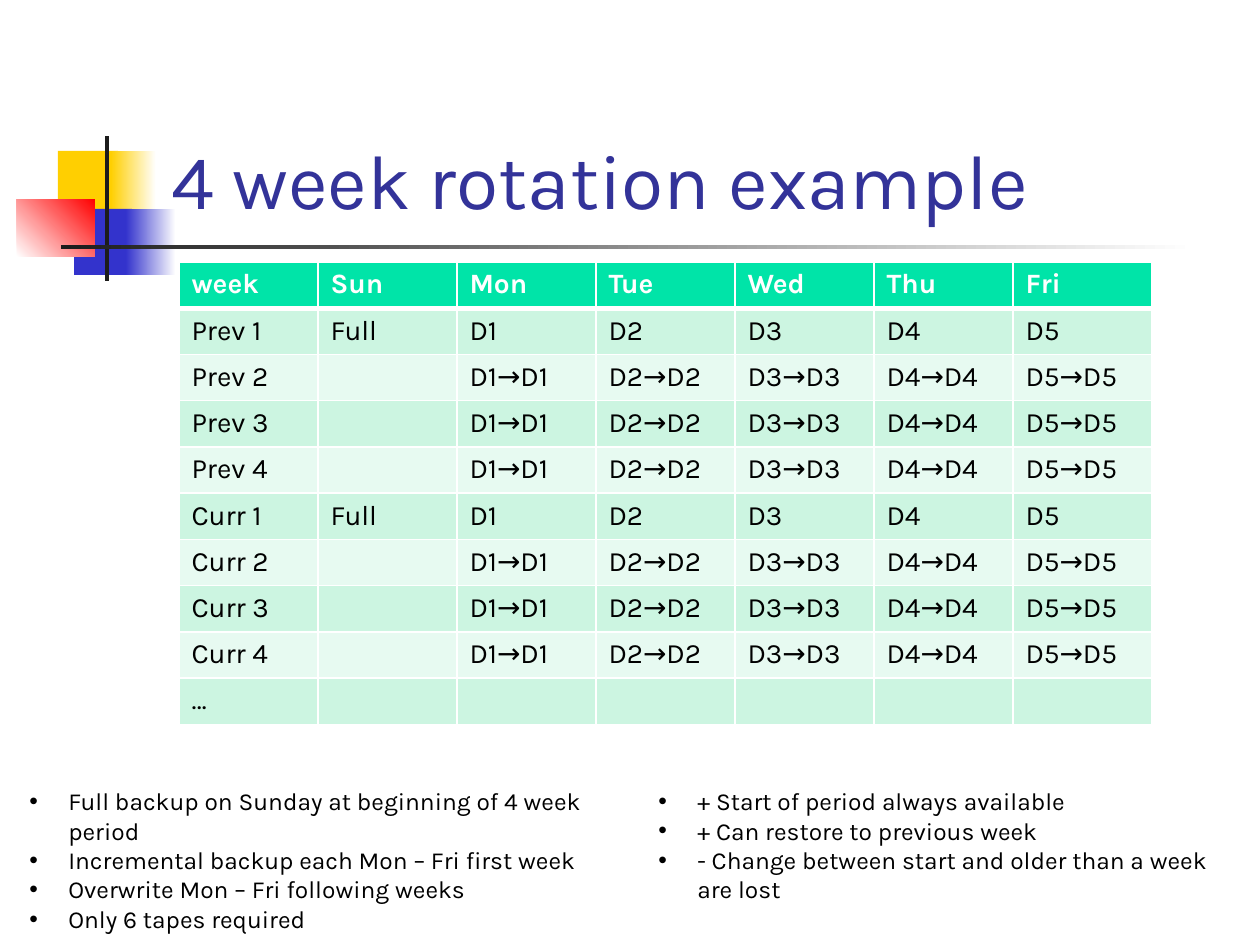
from lxml import etree
from pptx import Presentation, util as u
from pptx.dml.color import RGBColor
from pptx.enum import shapes, text
from pptx.oxml import ns

PX = 914400 // 126
FONT = "Karla"
WHITE = RGBColor(255, 255, 255)
BLACK = RGBColor(0, 0, 0)
INK = RGBColor(0x1C, 0x1C, 0x1C)
GOLD = RGBColor(0xFF, 0xCF, 0x01)
BLUE = RGBColor(0x33, 0x33, 0xCC)
RED = RGBColor(255, 0, 0)
NAVY = RGBColor(0x33, 0x33, 0x99)
HEAD = RGBColor(0x00, 0xE4, 0xA8)
BANDS = [RGBColor(0xE7, 0xFA, 0xF1), RGBColor(0xCC, 0xF5, 0xE1)]

# Box in px, start colour, end colour (None when plain), angle
DECOR = [
    ((58, 151, 60, 66), GOLD, None, 0),
    ((111, 151, 45, 66), GOLD, WHITE, 0),
    ((74, 209, 58, 66), BLUE, None, 0),
    ((126, 209, 50, 66), BLUE, WHITE, 0),
    ((17, 199, 78, 58), WHITE, RED, 45),
    ((105, 136, 4, 145), INK, None, 0),
    ((61, 245, 1134, 4), INK, WHITE, 0),
]
TITLE = "4 week rotation example"
DAYS = ["week", "Sun", "Mon", "Tue", "Wed", "Thu", "Fri"]
TAPES = ["D1", "D2", "D3", "D4", "D5"]
NOTES = [
    ((17, 780, 646, 131), [
        "Full backup on Sunday at beginning of 4 week period",
        "Incremental backup each Mon – Fri first week",
        "Overwrite Mon – Fri following weeks",
        "Only 6 tapes required"]),
    ((646, 780, 586, 131), [
        "+ Start of period always available",
        "+ Can restore to previous week",
        "- Change between start and older than a week are lost"]),
]
LEFT, TOP, COL, ROW = 179, 262, 139, 45
INDENT = 39


def emu(box):
    return [n * PX for n in box]


def write(para, words, size, color, bold=False):
    run = para.add_run()
    run.text = words
    font = run.font
    font.name, font.size, font.bold = FONT, u.Pt(size), bold
    font.color.rgb = color


def add_decor(slide, box, start, end, angle):
    shape = slide.shapes.add_shape(shapes.MSO_SHAPE.RECTANGLE, *emu(box))
    shape.shadow.inherit = False
    shape.line.fill.background()
    fill = shape.fill
    if end is None:
        fill.solid()
        fill.fore_color.rgb = start
        return
    fill.gradient()
    fill.gradient_angle = angle
    for stop, color in zip(fill.gradient_stops, (start, end)):
        stop.color.rgb = color


def add_text(slide, box):
    frame = slide.shapes.add_textbox(*emu(box)).text_frame
    frame.word_wrap = True
    return frame


def add_bullet(para):
    props = para._p.get_or_add_pPr()
    props.set("marL", str(INDENT * PX))
    props.set("indent", str(-INDENT * PX))
    etree.SubElement(props, ns.qn("a:buFont")).set("typeface", "Arial")
    etree.SubElement(props, ns.qn("a:buChar")).set("char", "•")


def add_border(cell, side, width):
    props = cell._tc.get_or_add_tcPr()
    line = etree.SubElement(props, ns.qn("a:ln" + side), w=str(u.Pt(width)))
    fill = etree.SubElement(line, ns.qn("a:solidFill"))
    etree.SubElement(fill, ns.qn("a:srgbClr")).set("val", str(WHITE))


def week_rows():
    """Header, four weeks for each period, and a closing row."""
    rows = [DAYS]
    for period in ("Prev", "Curr"):
        for week in range(1, 5):
            first = week == 1
            tapes = TAPES if first else [f"{t}→{t}" for t in TAPES]
            rows.append([f"{period} {week}", "Full" if first else "", *tapes])
    return rows + [["…"] + [""] * (len(DAYS) - 1)]


def fill_cell(cell, words, row):
    for side in "LRTB":
        thick = (row, side) in ((0, "B"), (1, "T"))
        add_border(cell, side, 3 if thick else 1)
    cell.fill.solid()
    cell.fill.fore_color.rgb = BANDS[row % 2] if row else HEAD
    para = cell.text_frame.paragraphs[0]
    if words:
        write(para, words, 16, BLACK if row else WHITE, row == 0)
    else:
        # Keeps an empty cell from making its row taller
        etree.SubElement(para._p, ns.qn("a:endParaRPr")).set("sz", "1600")


def add_weeks(slide):
    rows = week_rows()
    box = (LEFT, TOP, COL * len(DAYS), ROW * len(rows))
    table = slide.shapes.add_table(len(rows), len(DAYS), *emu(box)).table
    for col in table.columns:
        col.width = COL * PX
    for r, row in enumerate(rows):
        table.rows[r].height = ROW * PX
        for c, words in enumerate(row):
            fill_cell(table.cell(r, c), words, r)


def main():
    prs = Presentation()
    prs.slide_width, prs.slide_height = u.Inches(10), u.Inches(7.5)
    slide = prs.slides.add_slide(prs.slide_layouts[6])
    for item in DECOR:
        add_decor(slide, *item)
    title = add_text(slide, (159, 29, 1074, 202))
    title.vertical_anchor = text.MSO_ANCHOR.BOTTOM
    write(title.paragraphs[0], TITLE, 44, NAVY)
    add_weeks(slide)
    for box, lines in NOTES:
        frame = add_text(slide, box)
        for i, line in enumerate(lines):
            para = frame.add_paragraph() if i else frame.paragraphs[0]
            add_bullet(para)
            write(para, line, 14, BLACK)
    prs.save("out.pptx")


if __name__ == "__main__":
    main()
